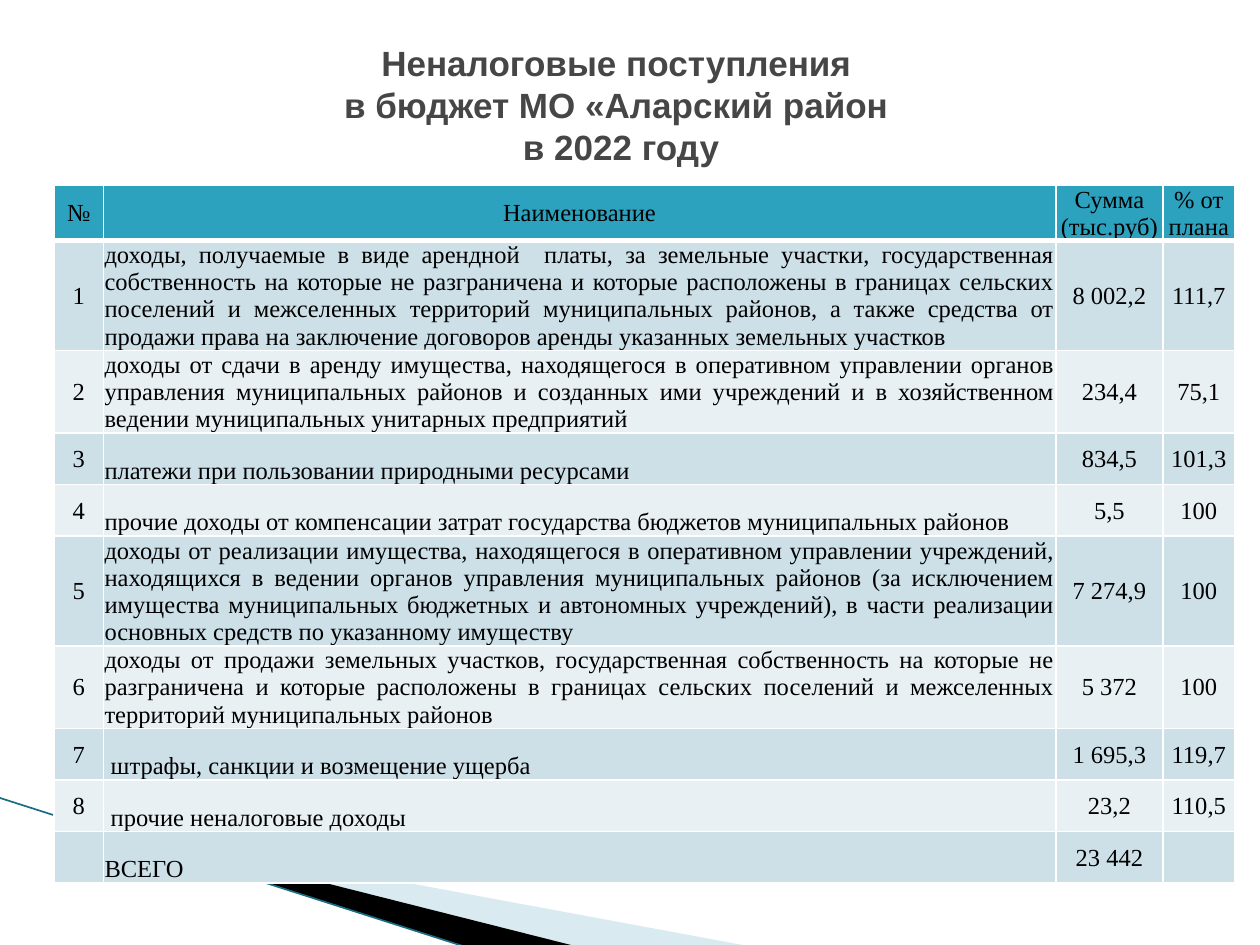
"""Build the slide on non-tax revenues of the district budget in 2022."""
from typing import NamedTuple

from lxml.etree import SubElement
from pptx import Presentation
from pptx.dml.color import RGBColor
from pptx.enum.shapes import MSO_CONNECTOR
from pptx.enum.text import MSO_ANCHOR, PP_ALIGN
from pptx.oxml.ns import qn
from pptx.util import Inches, Pt


class Revenue(NamedTuple):
    number: str
    source: str
    amount: str
    percent: str


class Wedge(NamedTuple):
    points: tuple
    color: str
    opacity: int


class Column(NamedTuple):
    width: float
    align: PP_ALIGN
    anchor: MSO_ANCHOR


WEDGES = (
    Wedge(((0.55, 6.51), (5.95, 7.51), (4.56, 7.51), (0.55, 6.5)), "A0CBDC", 40),
    Wedge(((0.53, 6.49), (4.57, 7.51), (3.72, 7.52), (0.54, 6.5)), "000000", 100),
)
TITLE = ("Неналоговые поступления ", "в бюджет МО «Аларский район ", "в 2022 году")
COLUMNS = (
    Column(0.39, PP_ALIGN.CENTER, MSO_ANCHOR.MIDDLE),
    Column(7.56, PP_ALIGN.JUSTIFY, MSO_ANCHOR.BOTTOM),
    Column(0.85, PP_ALIGN.CENTER, MSO_ANCHOR.MIDDLE),
    Column(0.57, PP_ALIGN.CENTER, MSO_ANCHOR.MIDDLE),
)
HEADER = Revenue("№", "Наименование", "Сумма\n(тыс.руб)", "% от плана")
REVENUES = (
    Revenue("1", "доходы, получаемые в виде арендной  платы, за земельные участки, "
            "государственная собственность на которые не разграничена и которые "
            "расположены в границах сельских поселений и межселенных территорий "
            "муниципальных районов, а также средства от продажи права на заключение "
            "договоров аренды указанных земельных участков", "8 002,2", "111,7"),
    Revenue("2", "доходы от сдачи в аренду имущества, находящегося в оперативном "
            "управлении органов управления муниципальных районов и созданных ими "
            "учреждений и в хозяйственном ведении муниципальных унитарных предприятий ",
            "234,4", "75,1"),
    Revenue("3", "платежи при пользовании природными ресурсами ", "834,5", "101,3"),
    Revenue("4", "прочие доходы от компенсации затрат государства бюджетов "
            "муниципальных районов ", "5,5", "100"),
    Revenue("5", "доходы от реализации имущества, находящегося в оперативном "
            "управлении учреждений, находящихся в ведении органов управления "
            "муниципальных районов (за исключением имущества муниципальных бюджетных "
            "и автономных учреждений), в части реализации основных средств по "
            "указанному имуществу", "7 274,9", "100"),
    Revenue("6", "доходы от продажи земельных участков, государственная собственность "
            "на которые не разграничена и которые расположены в границах сельских "
            "поселений и межселенных территорий муниципальных районов", "5 372", "100"),
    Revenue("7", " штрафы, санкции и возмещение ущерба", "1 695,3", "119,7"),
    Revenue("8", " прочие неналоговые доходы", "23,2", "110,5"),
    Revenue("", "ВСЕГО", "23 442", ""),
)
ROW_HEIGHT = 0.41


def paint(color_holder, color: str) -> None:
    color_holder.solid()
    color_holder.fore_color.rgb = RGBColor.from_string(color)


def style_paragraph(paragraph, align: PP_ALIGN, font_name: str, size: float,
                    color: str, bold: bool) -> None:
    paragraph.alignment = align
    font = paragraph.font
    font.name, font.size, font.bold = font_name, Pt(size), bold
    paint(font.fill, color)


def draw_wedge(slide, wedge: Wedge) -> None:
    start, *others = [(Inches(x), Inches(y)) for x, y in wedge.points]
    builder = slide.shapes.build_freeform(*start)
    builder.add_line_segments(others, close=True)
    shape = builder.convert_to_shape()
    shape.shadow.inherit = False
    paint(shape.fill, wedge.color)
    shape.line.fill.background()
    if wedge.opacity < 100:
        color = shape.fill._xPr.find(qn("a:solidFill"))[0]
        SubElement(color, qn("a:alpha"), val=str(wedge.opacity * 1000))


def draw_edge(slide) -> None:
    edge = slide.shapes.add_connector(MSO_CONNECTOR.STRAIGHT, Inches(-0.01),
                                      Inches(6.33), Inches(3.71), Inches(7.52))
    edge.line.width = Pt(0.95)
    paint(edge.line.fill, "1A6C80")
    SubElement(edge._element.spPr, qn("a:effectLst"))


def draw_title(slide) -> None:
    box = slide.shapes.add_textbox(Inches(0.43), Inches(0.21), Inches(9), Inches(1.24))
    frame = box.text_frame
    frame.word_wrap = True
    frame.vertical_anchor = MSO_ANCHOR.MIDDLE
    paragraph = frame.paragraphs[0]
    for index, line in enumerate(TITLE):
        if index:
            paragraph.add_line_break()
        paragraph.add_run().text = line
    style_paragraph(paragraph, PP_ALIGN.CENTER, "Arial", 20, "464646", True)


def add_borders(cell, bottom_width: float) -> None:
    properties = cell._tc.get_or_add_tcPr()
    for side, width in (("L", 1), ("R", 1), ("T", 1), ("B", bottom_width)):
        border = SubElement(properties, qn(f"a:ln{side}"), w=str(Pt(width)))
        fill = SubElement(border, qn("a:solidFill"))
        SubElement(fill, qn("a:srgbClr"), val="FFFFFF")


def fill_cell(cell, text: str, align: PP_ALIGN, anchor: MSO_ANCHOR,
              color: str, bottom_width: float) -> None:
    cell.margin_left = cell.margin_right = cell.margin_top = Inches(0.01)
    cell.margin_bottom = 0
    cell.vertical_anchor = anchor
    cell.text = text
    for paragraph in cell.text_frame.paragraphs:
        style_paragraph(paragraph, align, "Times New Roman", 14, "000000", False)
    add_borders(cell, bottom_width)
    paint(cell.fill, color)


def draw_table(slide) -> None:
    rows = (HEADER, *REVENUES)
    table = slide.shapes.add_table(
        len(rows), len(COLUMNS), Inches(0.43), Inches(1.47),
        Inches(sum(column.width for column in COLUMNS)),
        Inches(ROW_HEIGHT * len(rows))).table
    table.first_row = table.horz_banding = False
    for index, column in enumerate(COLUMNS):
        table.columns[index].width = Inches(column.width)
    for row_index, row in enumerate(rows):
        table.rows[row_index].height = Inches(ROW_HEIGHT)
        for column_index, (text, column) in enumerate(zip(row, COLUMNS)):
            cell = table.cell(row_index, column_index)
            if row_index == 0:
                fill_cell(cell, text, PP_ALIGN.CENTER, MSO_ANCHOR.MIDDLE, "2DA2BF", 3)
            else:
                band = "CDE0E8" if row_index % 2 else "E8F0F4"
                fill_cell(cell, text, column.align, column.anchor, band, 1)


def main() -> None:
    presentation = Presentation()
    presentation.slide_width, presentation.slide_height = Inches(10), Inches(7.5)
    slide = presentation.slides.add_slide(presentation.slide_layouts[6])
    for wedge in WEDGES:
        draw_wedge(slide, wedge)
    draw_edge(slide)
    draw_table(slide)
    draw_title(slide)
    presentation.save("out.pptx")


if __name__ == "__main__":
    main()
